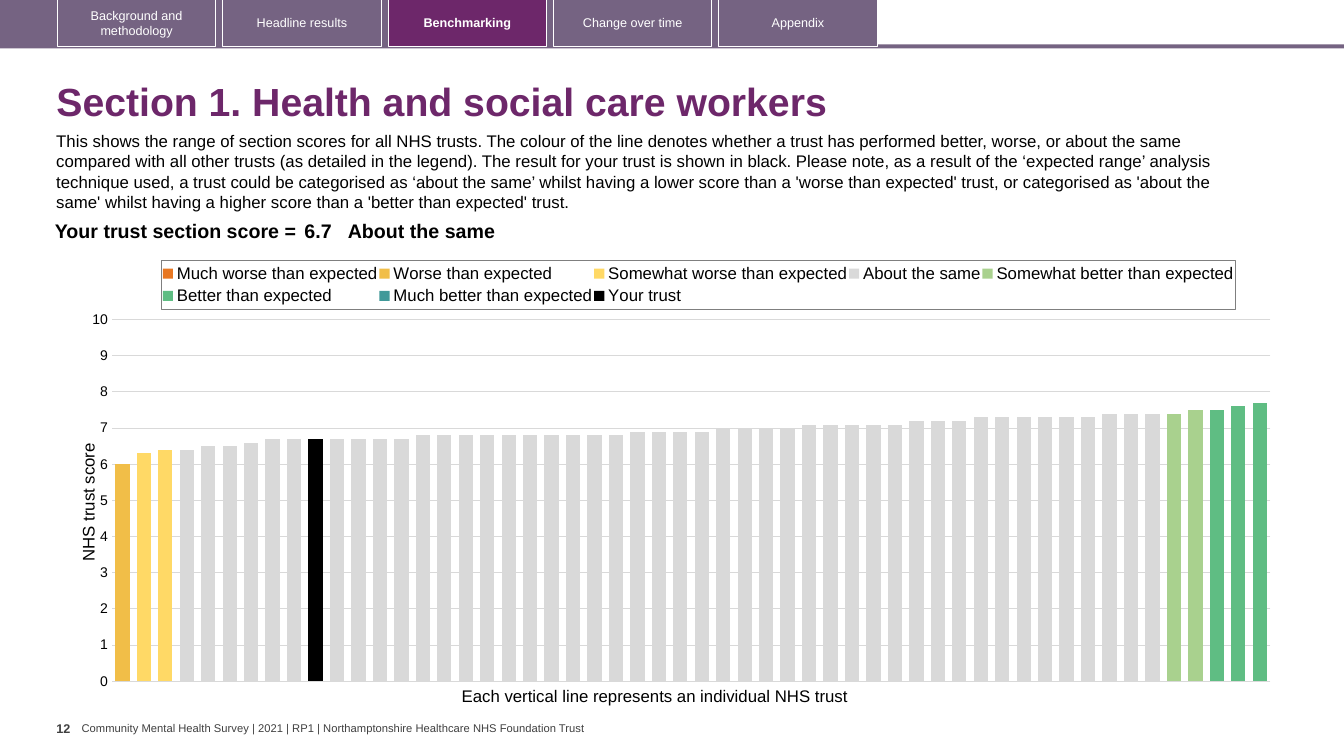
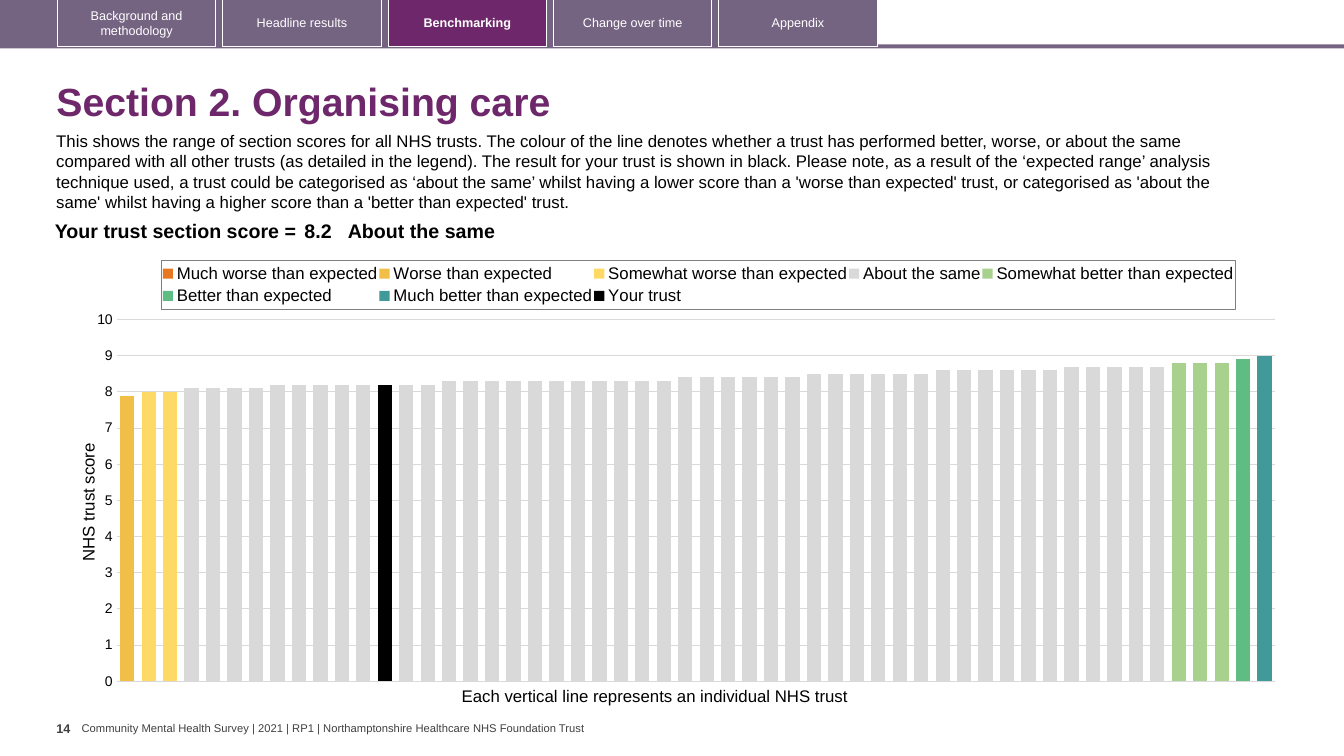
from copy import deepcopy

from lxml.etree import SubElement
from pptx import Presentation
from pptx.chart.data import CategoryChartData
from pptx.dml.color import RGBColor
from pptx.enum.chart import XL_CHART_TYPE, XL_LEGEND_POSITION, XL_TICK_MARK
from pptx.enum.shapes import MSO_SHAPE
from pptx.enum.text import MSO_ANCHOR, PP_ALIGN
from pptx.oxml import parse_xml
from pptx.oxml.ns import nsdecls, qn
from pptx.util import Inches, Pt

PURPLE = "6D276A"
MAUVE = "756382"
WHITE = "FFFFFF"
BLACK = "000000"
DARK_GREY = "404040"
GRID_GREY = "D9D9D9"
BORDER_GREY = "7F7F7F"

TABS = ["Background and methodology", "Headline results", "Benchmarking",
        "Change over time", "Appendix"]
CURRENT_TAB = "Benchmarking"
FOOTER = ("Community Mental Health Survey | 2021 | RP1 | "
          "Northamptonshire Healthcare NHS Foundation Trust")
EXPLANATION = (
    "This shows the range of section scores for all NHS trusts. The colour of the line "
    "denotes whether a trust has performed better, worse, or about the same compared with "
    "all other trusts (as detailed in the legend). The result for your trust is shown in "
    "black. Please note, as a result of the ‘expected range’ analysis technique used, a "
    "trust could be categorised as ‘about the same’ whilst having a lower score than a "
    "'worse than expected' trust, or categorised as 'about the same' whilst having a higher "
    "score than a 'better than expected' trust."
)
BANDS = [
    ("Much worse than expected", "E87722"),
    ("Worse than expected", "F1BE48"),
    ("Somewhat worse than expected", "FFD966"),
    ("About the same", "D9D9D9"),
    ("Somewhat better than expected", "A9D18E"),
    ("Better than expected", "5FBD83"),
    ("Much better than expected", "419999"),
]
SECTIONS = [
    {
        "number": "12",
        "title": "Section 1. Health and social care workers",
        "rank": 10,
        "plot_left": 0.036,
        "scores": [
            [], [6.0], [6.3, 6.4],
            [6.4, 6.5, 6.5, 6.6] + [6.7] * 7 + [6.8] * 10 + [6.9] * 4 + [7.0] * 4
            + [7.1] * 5 + [7.2] * 3 + [7.3] * 6 + [7.4] * 3,
            [7.4, 7.5], [7.5, 7.6, 7.7], [],
        ],
    },
    {
        "number": "14",
        "title": "Section 2. Organising care",
        "rank": 13,
        "plot_left": 0.04,
        "scores": [
            [], [7.9], [8.0, 8.0],
            [8.1] * 4 + [8.2] * 8 + [8.3] * 11 + [8.4] * 6 + [8.5] * 6
            + [8.6] * 6 + [8.7] * 5,
            [8.8] * 3, [8.9], [9.0],
        ],
    },
]


def colour(value):
    return RGBColor.from_string(value)


def format_font(font, size, color=BLACK, bold=False, name="Arial"):
    font.name = name
    font.size = Pt(size)
    font.bold = bold
    font.color.rgb = colour(color)


def write(frame, text, size=12, color=BLACK, bold=False, align=PP_ALIGN.LEFT,
          anchor=MSO_ANCHOR.TOP, wrap=True, margins=(0.1, 0.05), spacing=None):
    frame.word_wrap = wrap
    frame.vertical_anchor = anchor
    frame.margin_left = frame.margin_right = Inches(margins[0])
    frame.margin_top = frame.margin_bottom = Inches(margins[1])
    para = frame.paragraphs[0]
    para.alignment = align
    para.line_spacing = spacing
    span = para.add_run()
    span.text = text
    format_font(span.font, size, color, bold)


def add_text(page, text, left, top, width, height, **style):
    box = page.shapes.add_textbox(Inches(left), Inches(top), Inches(width), Inches(height))
    write(box.text_frame, text, **style)


def add_rectangle(page, left, top, width, height, fill=None, line=None):
    shape = page.shapes.add_shape(MSO_SHAPE.RECTANGLE, Inches(left), Inches(top),
                                  Inches(width), Inches(height))
    shape.shadow.inherit = False
    if fill:
        shape.fill.solid()
        shape.fill.fore_color.rgb = colour(fill)
    else:
        shape.fill.background()
    if line:
        shape.line.color.rgb = colour(line)
        shape.line.width = Pt(0.75)
    else:
        shape.line.fill.background()
    return shape


def add_frame(page, number):
    add_text(page, FOOTER, 0.81, 7.16, 5.05, 0.13, size=8, color=DARK_GREY,
             anchor=MSO_ANCHOR.MIDDLE, wrap=False, margins=(0, 0))
    add_text(page, number, 0.56, 7.1, 0.25, 0.4, size=9, color=DARK_GREY, bold=True,
             wrap=False, margins=(0, 0.05))
    add_rectangle(page, -0.03, 0.44, 13.36, 0.04, fill=MAUVE)
    add_rectangle(page, -0.03, 0, 8.73, 0.47, fill=MAUVE)
    for index, label in enumerate(TABS):
        current = label == CURRENT_TAB
        tab = add_rectangle(page, 0.57 + index * 1.64, -0.01, 1.57, 0.47,
                            fill=PURPLE if current else None, line=WHITE)
        write(tab.text_frame, label, size=9, color=WHITE, bold=current,
              align=PP_ALIGN.CENTER, anchor=MSO_ANCHOR.MIDDLE)


def set_title(page, text):
    title = page.shapes.title
    title.left, title.top = Inches(0.46), Inches(0.67)
    title.width, title.height = Inches(12.49), Inches(0.72)
    write(title.text_frame, text, size=28, color=PURPLE, bold=True,
          anchor=MSO_ANCHOR.MIDDLE, spacing=0.9)


def add_score_table(page, score, verdict):
    table = page.shapes.add_table(1, 3, Inches(0.35), Inches(2.15),
                                  Inches(11.69), Inches(0.31)).table
    table.first_row = table.horz_banding = False
    columns = [
        ("Your trust section score =", 2.63, PP_ALIGN.RIGHT, 0.04),
        (score, 0.47, PP_ALIGN.LEFT, 0.04),
        (verdict, 8.59, PP_ALIGN.LEFT, 0),
    ]
    for index, (text, width, align, margin) in enumerate(columns):
        table.columns[index].width = Inches(width)
        cell = table.cell(0, index)
        cell.fill.background()
        cell.margin_left = cell.margin_right = Inches(margin)
        cell.margin_top = cell.margin_bottom = Inches(0.04)
        para = cell.text_frame.paragraphs[0]
        para.alignment = align
        span = para.add_run()
        span.text = text
        format_font(span.font, 14, bold=True)


def set_layout(parent, position, **settings):
    for old in parent.findall(qn("c:layout")):
        parent.remove(old)
    layout = parse_xml(f"<c:layout {nsdecls('c')}><c:manualLayout/></c:layout>")
    for name, value in settings.items():
        SubElement(layout[0], qn(f"c:{name}")).set("val", str(value))
    parent.insert(position, layout)


def move_last_series_to_right_axis(chart):
    plot_area = chart.plots[0]._element.getparent()
    left_bars = plot_area.find(qn("c:barChart"))
    right_bars = deepcopy(left_bars)
    left_bars.remove(left_bars.findall(qn("c:ser"))[-1])
    for series in right_bars.findall(qn("c:ser"))[:-1]:
        right_bars.remove(series)
    left_bars.addnext(right_bars)

    category_axis = deepcopy(plot_area.find(qn("c:catAx")))
    value_axis = deepcopy(plot_area.find(qn("c:valAx")))
    new_ids = {
        category_axis.find(qn("c:axId")).get("val"): "50010",
        value_axis.find(qn("c:axId")).get("val"): "50020",
    }
    for element in (right_bars, category_axis, value_axis):
        for tag in ("c:axId", "c:crossAx"):
            for reference in element.findall(qn(tag)):
                reference.set("val", new_ids[reference.get("val")])
    for tag in ("c:majorGridlines", "c:title"):
        value_axis.remove(value_axis.find(qn(tag)))
    for tag, value in (("c:axPos", "r"), ("c:tickLblPos", "none"), ("c:crosses", "max")):
        value_axis.find(qn(tag)).set("val", value)
    plot_area.find(qn("c:valAx")).addnext(value_axis)
    value_axis.addnext(category_axis)


def build_chart_data(scores, rank):
    total = sum(len(group) for group in scores)
    data = CategoryChartData()
    data.categories = [str(number) for number in range(1, total + 1)]
    start = 0
    for (name, _), group in zip(BANDS, scores):
        rest = total - start - len(group)
        data.add_series(name, [None] * start + group + [None] * rest)
        start += len(group)
    trust_score = sum(scores, [])[rank - 1]
    data.add_series("Your trust", [None] * (rank - 1) + [trust_score] + [None] * (total - rank))
    return data


def format_value_axis(axis):
    axis.minimum_scale, axis.maximum_scale, axis.major_unit = 0, 10, 1
    axis.major_tick_mark = axis.minor_tick_mark = XL_TICK_MARK.NONE
    axis.format.line.fill.background()
    axis.major_gridlines.format.line.color.rgb = colour(GRID_GREY)
    axis.major_gridlines.format.line.width = Pt(0.75)
    format_font(axis.tick_labels.font, 10)
    span = axis.axis_title.text_frame.paragraphs[0].add_run()
    span.text = "NHS trust score"
    format_font(span.font, 12)
    set_layout(axis.axis_title._element, 1, xMode="edge", yMode="edge", x=0.006, y=0.427)


def format_legend(chart):
    chart.has_legend = True
    legend = chart.legend
    legend.position = XL_LEGEND_POSITION.TOP
    legend.include_in_layout = False
    format_font(legend.font, 12)
    set_layout(legend._element, 1, xMode="edge", yMode="edge",
               x=0.0765, y=0.025, w=0.877, h=0.11)
    border = parse_xml(
        f'<c:spPr {nsdecls("c", "a")}><a:ln w="9525"><a:solidFill>'
        f'<a:srgbClr val="{BORDER_GREY}"/></a:solidFill></a:ln></c:spPr>')
    legend._element.find(qn("c:overlay")).addnext(border)


def add_score_chart(page, scores, rank, plot_left):
    chart = page.shapes.add_chart(
        XL_CHART_TYPE.COLUMN_CLUSTERED, Inches(0.67), Inches(2.47), Inches(12.15),
        Inches(4.44), build_chart_data(scores, rank)).chart
    chart.has_title = False
    format_font(chart.font, 10, name="Calibri")
    plot = chart.plots[0]
    plot.vary_by_categories = False
    plot.gap_width, plot.overlap = 50, 100
    colours = [color for _, color in BANDS] + [BLACK]
    for series, color in zip(plot.series, colours):
        series.format.fill.solid()
        series.format.fill.fore_color.rgb = colour(color)
        series.invert_if_negative = False
    chart.category_axis.visible = False
    format_value_axis(chart.value_axis)
    format_legend(chart)
    set_layout(plot._element.getparent(), 0, layoutTarget="inner", xMode="edge",
               yMode="edge", x=plot_left, y=0.158, w=0.946, h=0.808)
    move_last_series_to_right_axis(chart)


def add_section(deck, number, title, rank, plot_left, scores):
    page = deck.slides.add_slide(deck.slide_layouts[5])
    set_title(page, title)
    add_frame(page, number)
    add_text(page, EXPLANATION, 0.46, 1.25, 12.13, 0.91)
    add_text(page, "Each vertical line represents an individual NHS trust",
             4.48, 6.75, 4.11, 0.3, wrap=False)
    add_score_chart(page, scores, rank, plot_left)
    add_score_table(page, str(sum(scores, [])[rank - 1]), "About the same")


def main():
    deck = Presentation()
    deck.slide_width, deck.slide_height = Inches(13.33), Inches(7.5)
    for section in SECTIONS:
        add_section(deck, **section)
    deck.save("out.pptx")


if __name__ == "__main__":
    main()
